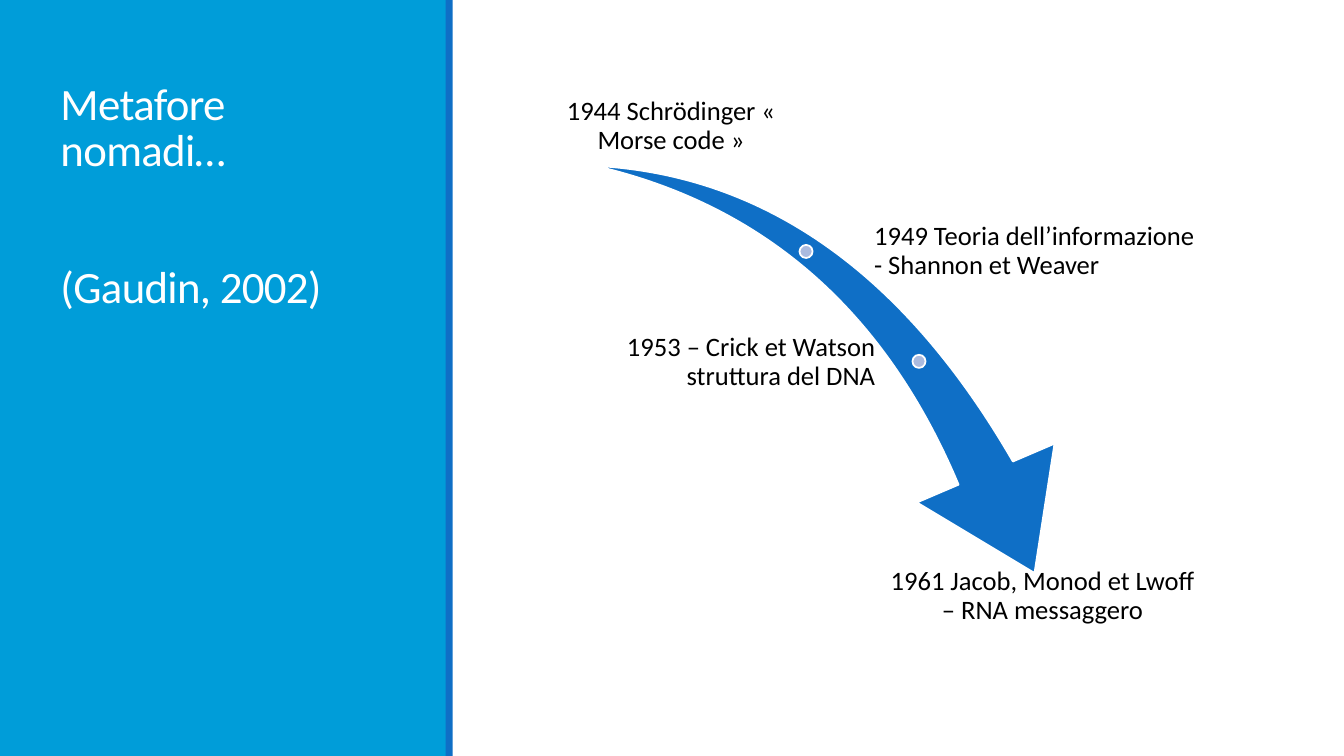
import dataclasses

import pptx
import pptx.dml.color
import pptx.enum.shapes
import pptx.enum.text
import pptx.util

Inches = pptx.util.Inches
Pt = pptx.util.Pt
Shape = pptx.enum.shapes.MSO_SHAPE
Align = pptx.enum.text.PP_ALIGN
Anchor = pptx.enum.text.MSO_ANCHOR

FONT = "Calibri"
COLORS = {
    "panel": "009DD9",
    "accent": "0F6FC6",
    "marker": "ABBBDF",
    "white": "FFFFFF",
    "black": "000000",
}


@dataclasses.dataclass
class Figure:
    kind: Shape
    left: float
    top: float
    width: float
    height: float
    fill: str
    outlined: bool = False
    rotation: float = 0
    adjustments: tuple[float, ...] = ()


@dataclasses.dataclass
class Milestone:
    text: str
    left: float
    top: float
    width: float
    align: Align
    anchor: Anchor


PANELS = [
    Figure(Shape.RECTANGLE, 0, 0, 4.43, 7.5, "panel"),
    Figure(Shape.RECTANGLE, 4.42, 0, 0.07, 7.5, "accent"),
]
TIMELINE = [
    Figure(Shape.SWOOSH_ARROW, 5.79, 1.8, 5.12, 3.57, "accent", True, 73.3, (0.163, 0.314)),
    Figure(Shape.OVAL, 7.93, 2.43, 0.13, 0.13, "marker", True),
    Figure(Shape.OVAL, 9.05, 3.52, 0.13, 0.13, "marker", True),
]
MILESTONES = [
    Milestone("1944 Schrödinger « Morse code »", 5.45, 0.62, 2.41, Align.CENTER, Anchor.BOTTOM),
    Milestone("1949 Teoria dell’informazione - Shannon et Weaver", 8.64, 2.02, 3.32, Align.LEFT, Anchor.MIDDLE),
    Milestone("1953 – Crick et Watson struttura del DNA", 5.45, 3.12, 3.26, Align.RIGHT, Anchor.MIDDLE),
    Milestone("1961 Jacob, Monod et Lwoff – RNA messaggero", 8.71, 5.6, 3.26, Align.CENTER, Anchor.TOP),
]


def color(name: str) -> pptx.dml.color.RGBColor:
    return pptx.dml.color.RGBColor.from_string(COLORS[name])


def draw_figure(slide, figure: Figure) -> None:
    shape = slide.shapes.add_shape(
        figure.kind, Inches(figure.left), Inches(figure.top),
        Inches(figure.width), Inches(figure.height))
    shape.shadow.inherit = False
    shape.rotation = figure.rotation
    for index, value in enumerate(figure.adjustments):
        shape.adjustments[index] = value
    shape.fill.solid()
    shape.fill.fore_color.rgb = color(figure.fill)
    if figure.outlined:
        shape.line.color.rgb = color("white")
        shape.line.width = Pt(1.25)
    else:
        shape.line.fill.background()


def format_paragraph(paragraph, size: float, color_name: str, spacing: float, align: Align) -> None:
    paragraph.alignment = align
    paragraph.line_spacing = spacing
    for run in paragraph.runs:
        run.font.name = FONT
        run.font.size = Pt(size)
        run.font.color.rgb = color(color_name)


def draw_milestone(slide, milestone: Milestone) -> None:
    box = slide.shapes.add_textbox(
        Inches(milestone.left), Inches(milestone.top), Inches(milestone.width), Inches(0.95))
    frame = box.text_frame
    frame.word_wrap = True
    frame.vertical_anchor = milestone.anchor
    frame.margin_left = frame.margin_right = Inches(0.03)
    frame.margin_top = frame.margin_bottom = Inches(0.03)
    frame.text = milestone.text
    format_paragraph(frame.paragraphs[0], 19, "black", 0.9, milestone.align)


def fill_title(slide) -> None:
    title = slide.shapes.title
    title.left, title.top = Inches(0.5), Inches(0.65)
    title.width, title.height = Inches(3.5), Inches(2.5)
    frame = title.text_frame
    frame.text = "Metafore nomadi…\n(Gaudin, 2002)"
    frame.word_wrap = True
    frame.auto_size = pptx.enum.text.MSO_AUTO_SIZE.NONE
    frame.vertical_anchor = Anchor.BOTTOM
    for paragraph in frame.paragraphs:
        format_paragraph(paragraph, 32, "white", 0.85, Align.LEFT)
        for run in paragraph.runs:
            run.font._element.set("spc", "-50")
    frame.paragraphs[1].space_before = Pt(65)
    # Bring the title in front of the panel
    title.element.getparent().append(title.element)


def main() -> None:
    presentation = pptx.Presentation()
    presentation.slide_width = Inches(13.33)
    presentation.slide_height = Inches(7.5)
    slide = presentation.slides.add_slide(presentation.slide_layouts.get_by_name("Title Only"))

    # Left panel with the title
    for panel in PANELS:
        draw_figure(slide, panel)
    fill_title(slide)

    # Curved timeline and its milestones
    for figure in TIMELINE:
        draw_figure(slide, figure)
    for milestone in MILESTONES:
        draw_milestone(slide, milestone)

    presentation.save("out.pptx")


if __name__ == "__main__":
    main()
